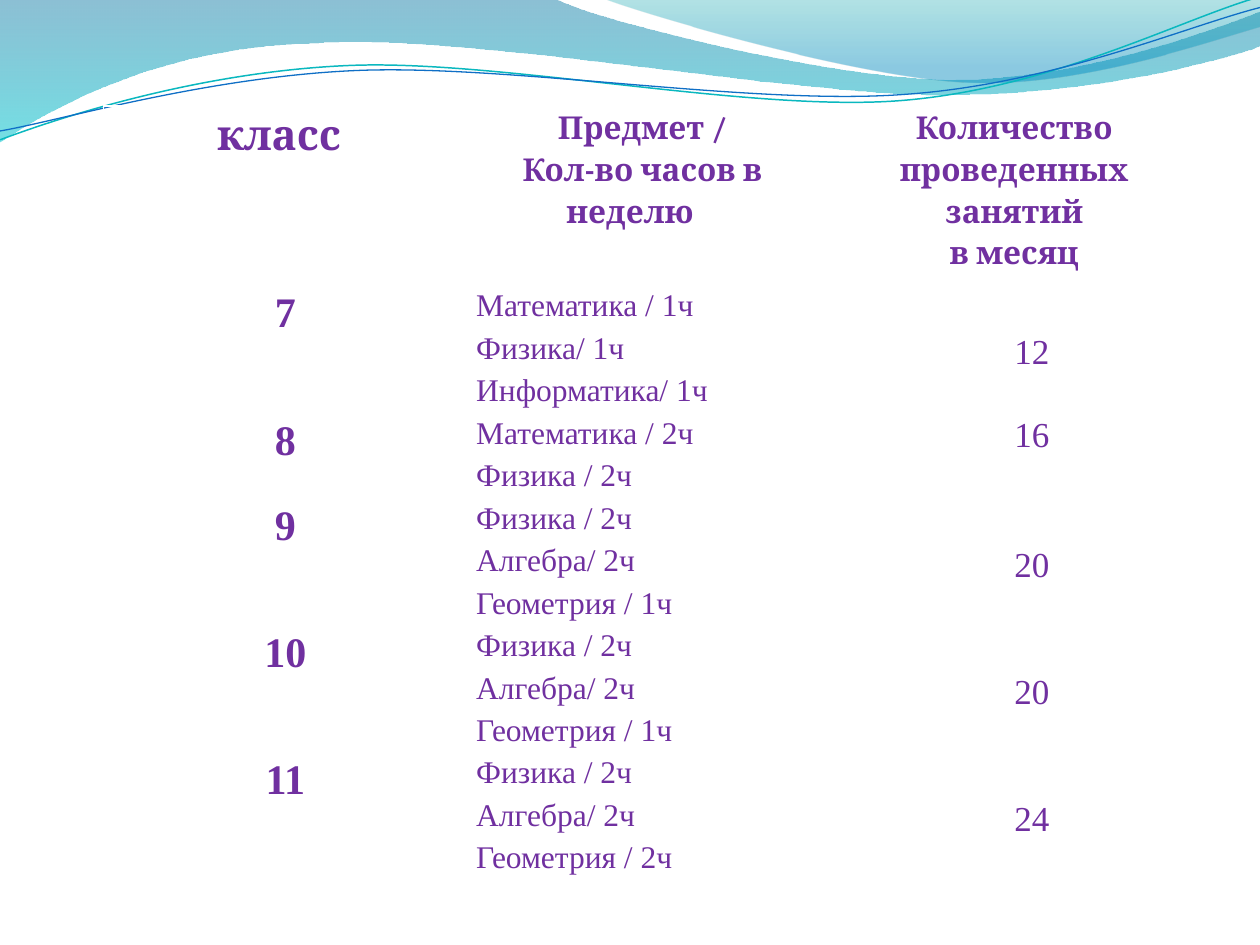
import math
import pptx
import pptx.util
import pptx.dml.color
import pptx.enum.text
import pptx.oxml
import pptx.oxml.ns

Inches, Pt = pptx.util.Inches, pptx.util.Pt
RGB = pptx.dml.color.RGBColor.from_string
align = pptx.enum.text.PP_ALIGN
qn, space = pptx.oxml.ns.qn, pptx.oxml.ns.nsdecls("a")
hues = {"text": "7030A0", "edge": "FFFFFF", "teal": "0AB8BF", "blue": "0F6FC6",
        "sea": "0074A1", "aqua": "00C6CF", "mint": "00A1A9", "sky": "008BBF"}

deck = pptx.Presentation()
deck.slide_width, deck.slide_height = Inches(10), Inches(7.5)
slide = deck.slides.add_slide(deck.slide_layouts[6])


def draw(shapes, start, steps, close):
    """Outline from steps of one point (a line) or three (a Bezier curve)."""
    ends = [(Inches(x), Inches(y)) for x, y in (step[-1] for step in steps)]
    pen = shapes.build_freeform(Inches(start[0]), Inches(start[1]))
    pen.add_line_segments(ends, close=close)
    shape = pen.convert_to_shape()
    shape.shadow.inherit = False
    left = min(Inches(start[0]), *(x for x, y in ends))
    top = min(Inches(start[1]), *(y for x, y in ends))
    for node, step in zip(list(shape._element.iter(qn("a:lnTo"))), steps):
        if len(step) == 3:
            dots = "".join(f'<a:pt x="{Inches(x) - left}" y="{Inches(y) - top}"/>'
                           for x, y in step)
            node.getparent().replace(node, pptx.oxml.parse_xml(
                f'<a:cubicBezTo {space}>{dots}</a:cubicBezTo>'))
    return shape


def write(para, text, size, font, bold, indent, left=0):
    para.line_spacing = 1.15
    props = para._p.get_or_add_pPr()
    props.set("marL", str(Inches(left)))
    props.set("indent", str(Inches(indent)))
    run = para.add_run()
    run.text = text
    run.font.size, run.font.name, run.font.bold = Pt(size), font, bold
    run.font.color.rgb = RGB(hues["text"])


# Waves: start, steps, gradient stops (place, colour, opacity)
waves = [
    ((0, 0), [[(4.4, -0.01)],
              [(4.76, 0.17), (6.64, 0.63), (7.58, 0.63)],
              [(8.53, 0.63), (9.58, 0.26), (10, 0.09)],
              [(10.01, 0.36)],
              [(9.83, 0.44), (8.7, 0.76), (7.46, 0.75)],
              [(6.22, 0.75), (3.82, 0.28), (2.57, 0.34)],
              [(1.29, 0.36), (0.46, 0.83), (-0.01, 1.13)],
              [(0, 0)]],
     [(0, "sea", 45), (1, "aqua", 55)]),
    ((4.79, -0.01), [[(5.09, 0.11), (6.82, 0.62), (7.69, 0.65)],
                     [(8.56, 0.69), (9.61, 0.32), (10, 0.21)],
                     [(10, 0)],
                     [(4.79, -0.01)]],
     [(0, "mint", 30), (0.8, "sky", 45)]),
]
for start, steps, stops in waves:
    wave = draw(slide.shapes, start, steps, True)
    wave.line.fill.background()
    wave.fill.gradient()
    wave.fill.gradient_angle = 270
    for stop, (place, hue, solid) in zip(wave.fill.gradient_stops, stops):
        stop.position = place
        stop.color.rgb = RGB(hues[hue])
        stop._gs.find(qn("a:srgbClr")).append(
            pptx.oxml.parse_xml(f'<a:alpha {space} val="{solid * 1000}"/>'))

# Tilted lines: points as seen, turned level about the centre, then rotated
tilt = 2.7
cos, sin = math.cos(math.radians(tilt)), math.sin(math.radians(tilt))
lines = [
    ((0, 1.11), [[(0.48, 0.93), (1.58, 0.57), (2.77, 0.52)],
                 [(3.95, 0.47), (5.93, 0.89), (7.13, 0.8)],
                 [(8.33, 0.71), (9.38, 0.15), (9.98, -0.02)]],
     "teal", 0.85, (4.99, 0.58)),
    ((0, 1.04), [[(0.47, 0.96), (1.64, 0.61), (2.83, 0.56)],
                 [(4.03, 0.51), (5.97, 0.84), (7.17, 0.75)],
                 [(8.36, 0.67), (9.41, 0.21), (10, 0.06)]],
     "blue", 0.75, (5, 0.59)),
]
pair = slide.shapes.add_group_shape()
for start, steps, hue, width, (midx, midy) in lines:
    level = [[(midx + (x - midx) * cos - (y - midy) * sin,
               midy + (x - midx) * sin + (y - midy) * cos) for x, y in step]
             for step in [[start], *steps]]
    line = draw(pair.shapes, level[0][0], level[1:], False)
    line.rotation = 360 - tilt
    line.fill.background()
    line.line.color.rgb = RGB(hues[hue])
    line.line.width = Pt(width)

heads = [(["класс"], 24, 0.2, 0), (["Предмет /", "Кол-во часов в неделю"], 18, 0.2, 0),
         (["Количество проведенных занятий", "в месяц"], 18, 0, 0.02)]
# Class, subjects, lessons a month, gap above the lesson count
groups = [
    ("7", ["Математика / 1ч", "Физика/ 1ч", "Информатика/ 1ч"], "12", 0.35),
    ("8", ["Математика / 2ч", "Физика / 2ч"], "16", 0),
    ("9", ["Физика / 2ч", "Алгебра/ 2ч", "Геометрия / 1ч"], "20", 0.35),
    ("10", ["Физика / 2ч", "Алгебра/ 2ч", "Геометрия / 1ч"], "20", 0.35),
    ("11", ["Физика / 2ч", "Алгебра/ 2ч", "Геометрия / 2ч"], "24", 0.35),
]
count = 1 + sum(len(group[1]) for group in groups)
table = slide.shapes.add_table(count, 3, Inches(0.82), Inches(0.84),
                               Inches(8.67), Inches(6.13)).table
table.first_row = table.horz_banding = False
for col, width in zip(table.columns, (2.59, 3.18, 2.9)):
    col.width = Inches(width)
for i, row in enumerate(table.rows):
    row.height = Inches(4.72) // (count - 1) if i else Inches(1.41)
    for cell in row.cells:
        cell.margin_left = cell.margin_right = Inches(0.07)
        cell.margin_top = cell.margin_bottom = 0
        cell.fill.background()
        for k, side in enumerate(("lnL", "lnR", "lnT", "lnB")):
            thick = 3 if i == 0 and side == "lnB" else 1
            cell._tc.get_or_add_tcPr().insert(k, pptx.oxml.parse_xml(
                f'<a:{side} {space} w="{Pt(thick)}"><a:solidFill>'
                f'<a:srgbClr val="{hues["edge"]}"/></a:solidFill></a:{side}>'))

for k, (texts, size, indent, left) in enumerate(heads):
    frame = table.cell(0, k).text_frame
    for i, text in enumerate(texts):
        para = frame.add_paragraph() if i else frame.paragraphs[0]
        para.alignment = align.CENTER
        write(para, text, size, "Cambria", True, indent, left)

top = 1
for grade, names, total, gap in groups:
    end = top + len(names) - 1
    for k, text, size in ((0, grade, 24), (2, total, 20)):
        cell = table.cell(top, k)
        cell.merge(table.cell(end, k))
        para = cell.text_frame.paragraphs[0]
        para.alignment = align.CENTER
        write(para, text, size, "Times New Roman", k == 0, 0.3)
    cell.margin_top = Inches(gap)
    for i, name in enumerate(names):
        para = table.cell(top + i, 1).text_frame.paragraphs[0]
        write(para, name, 18, "Times New Roman", False, 0.3)
    top = end + 1

deck.save("out.pptx")
